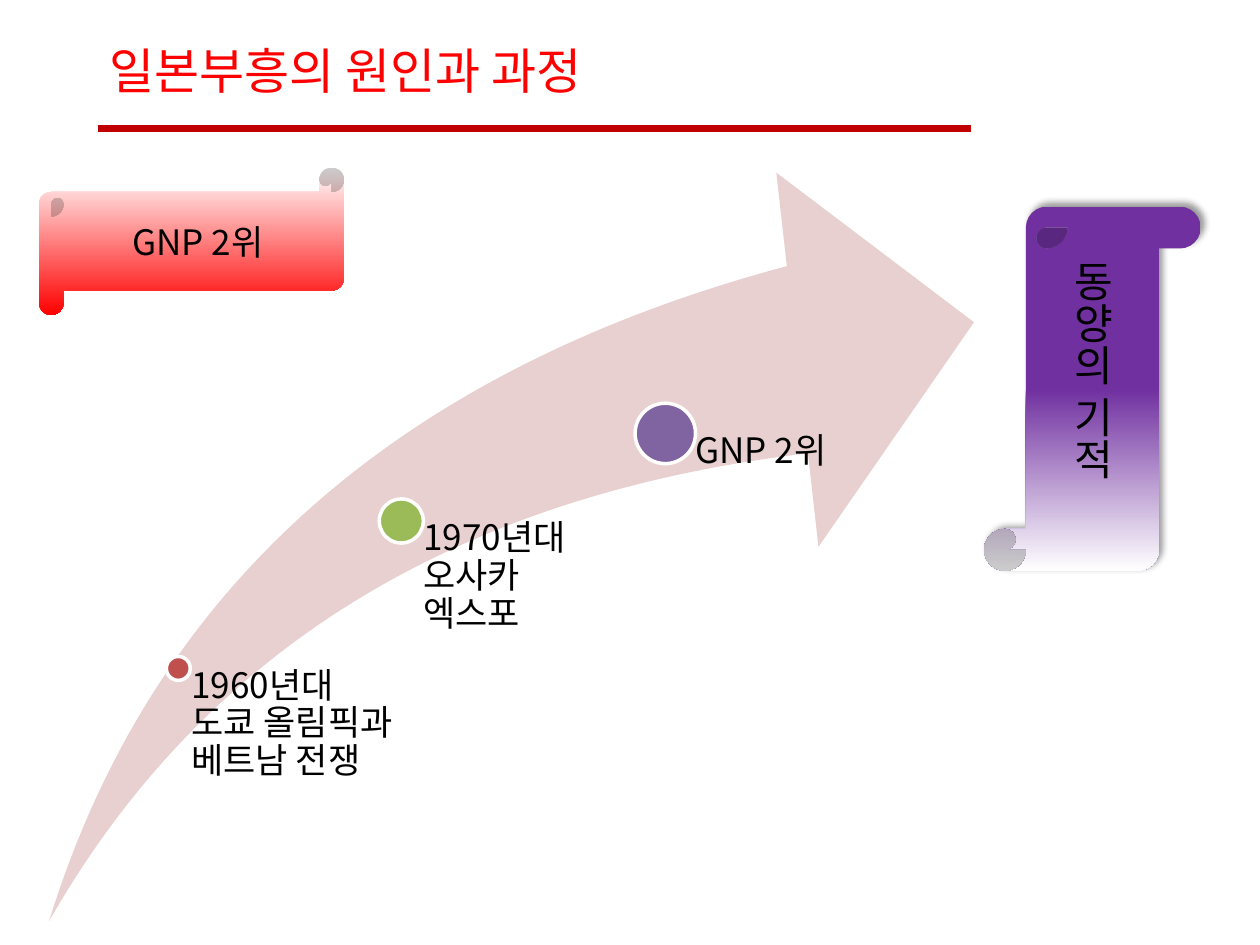
from dataclasses import dataclass

from lxml import etree
from pptx import Presentation
from pptx.dml.color import RGBColor
from pptx.enum.shapes import MSO_CONNECTOR, MSO_SHAPE
from pptx.enum.text import MSO_ANCHOR, PP_ALIGN
from pptx.oxml.ns import qn
from pptx.util import Inches, Pt

FONT = "Noto Sans CJK KR"
BLACK = "000000"
WHITE = "FFFFFF"
CENTER = PP_ALIGN.CENTER
LEFT = PP_ALIGN.LEFT
MIDDLE = MSO_ANCHOR.MIDDLE
TOP = MSO_ANCHOR.TOP
ELLIPSE = MSO_SHAPE.OVAL
SWOOSH = MSO_SHAPE.SWOOSH_ARROW
HORIZONTAL_SCROLL = MSO_SHAPE.HORIZONTAL_SCROLL
VERTICAL_SCROLL = MSO_SHAPE.VERTICAL_SCROLL
TITLE_ONLY = 5


@dataclass
class Box:
    left: float
    top: float
    width: float
    height: float

    def lengths(self) -> list:
        return [Inches(n) for n in (self.left, self.top, self.width, self.height)]


@dataclass
class Milestone:
    dot: Box
    color: str
    label: Box
    inset: float
    text: str


@dataclass
class Scroll:
    kind: MSO_SHAPE
    box: Box
    curl: float
    stops: list
    text: str
    size: int


MILESTONES = [
    Milestone(Box(1.32, 5.21, 0.19, 0.19), "C0504D", Box(1.42, 5.3, 1.71, 1.33),
              0.1, "1960년대 도쿄 올림픽과 베트남 전쟁"),
    Milestone(Box(3.01, 3.96, 0.35, 0.35), "9BBB59", Box(3.18, 4.13, 1.76, 2.5),
              0.18, "1970년대 오사카 엑스포"),
    Milestone(Box(5.04, 3.2, 0.48, 0.48), "8064A2", Box(5.27, 3.44, 1.76, 3.19),
              0.25, "GNP 2위"),
]
GNP_SCROLL = Scroll(HORIZONTAL_SCROLL, Box(0.31, 1.33, 2.42, 1.17), 0.166,
                    [(0, WHITE), (1, "FF0000")], "GNP 2위", 20)
MIRACLE_SCROLL = Scroll(VERTICAL_SCROLL, Box(7.81, 1.64, 1.72, 2.89), 0.193,
                        [(0.5, "7030A0"), (1, WHITE)], "동양의 기적", 24)


def rgb(value: str) -> RGBColor:
    return RGBColor.from_string(value)


def write(frame, text: str, size: int, color=BLACK, align=CENTER, anchor=MIDDLE):
    frame.word_wrap = True
    frame.vertical_anchor = anchor
    para = frame.paragraphs[0]
    para.alignment = align
    span = para.add_run()
    span.text = text
    span.font.size = Pt(size)
    span.font.name = FONT
    span.font.color.rgb = rgb(color)
    east_asian = etree.SubElement(span.font._element, qn("a:ea"))
    east_asian.set("typeface", FONT)
    return para


def add_plain_shape(page, kind: MSO_SHAPE, box: Box):
    """Add a shape with neither shadow nor outline."""
    shape = page.shapes.add_shape(kind, *box.lengths())
    shape.shadow.inherit = False
    shape.line.fill.background()
    return shape


def add_title(page, text: str) -> None:
    title = page.shapes.title
    title.left, title.top, title.width, title.height = Box(0.55, 0.16, 4.38, 0.79).lengths()
    write(title.text_frame, text, 28, "FF0000")


def add_rule(page) -> None:
    height = Inches(1.02)
    rule = page.shapes.add_connector(
        MSO_CONNECTOR.STRAIGHT, Inches(0.78), height, Inches(7.71), height)
    rule.line.color.rgb = rgb("C00000")
    rule.line.width = Pt(4)
    etree.SubElement(rule._element.spPr, qn("a:effectLst"))


def add_scroll(page, scroll: Scroll):
    shape = add_plain_shape(page, scroll.kind, scroll.box)
    shape.adjustments[0] = scroll.curl
    shape.fill.gradient()
    shape.fill.gradient_angle = 270
    for stop, (position, color) in zip(shape.fill.gradient_stops, scroll.stops):
        stop.position = position
        stop.color.rgb = rgb(color)
    write(shape.text_frame, scroll.text, scroll.size)
    return shape


def add_shadow(shape) -> None:
    effects = shape._element.spPr.find(qn("a:effectLst"))
    shadow = etree.SubElement(effects, qn("a:outerShdw"), blurRad=str(Pt(4)),
                              dist=str(Pt(3)), dir=str(315 * 60000))
    color = etree.SubElement(shadow, qn("a:srgbClr"), val=BLACK)
    etree.SubElement(color, qn("a:alpha"), val="40000")


def add_arrow(page) -> None:
    arrow = add_plain_shape(page, SWOOSH, Box(0.39, 1.37, 7.34, 5.94))
    arrow.adjustments[0] = arrow.adjustments[1] = 0.25
    arrow.fill.solid()
    arrow.fill.fore_color.rgb = rgb("E8D0D0")


def add_milestone(page, milestone: Milestone) -> None:
    dot = add_plain_shape(page, ELLIPSE, milestone.dot)
    dot.fill.solid()
    dot.fill.fore_color.rgb = rgb(milestone.color)
    dot.line.color.rgb = rgb(WHITE)
    dot.line.width = Pt(2)
    frame = page.shapes.add_textbox(*milestone.label.lengths()).text_frame
    frame.margin_left = Inches(milestone.inset)
    frame.margin_top = frame.margin_right = frame.margin_bottom = 0
    para = write(frame, milestone.text, 20, align=LEFT, anchor=TOP)
    para.line_spacing = 0.9


def main() -> None:
    deck = Presentation()
    deck.slide_width, deck.slide_height = Inches(10), Inches(7.5)
    page = deck.slides.add_slide(deck.slide_layouts[TITLE_ONLY])
    add_title(page, "일본부흥의 원인과 과정")
    add_rule(page)
    add_scroll(page, GNP_SCROLL)
    add_arrow(page)
    for milestone in MILESTONES:
        add_milestone(page, milestone)
    miracle = add_scroll(page, MIRACLE_SCROLL)
    miracle.text_frame._txBody.bodyPr.set("vert", "eaVert")
    add_shadow(miracle)
    deck.save("out.pptx")


if __name__ == "__main__":
    main()
